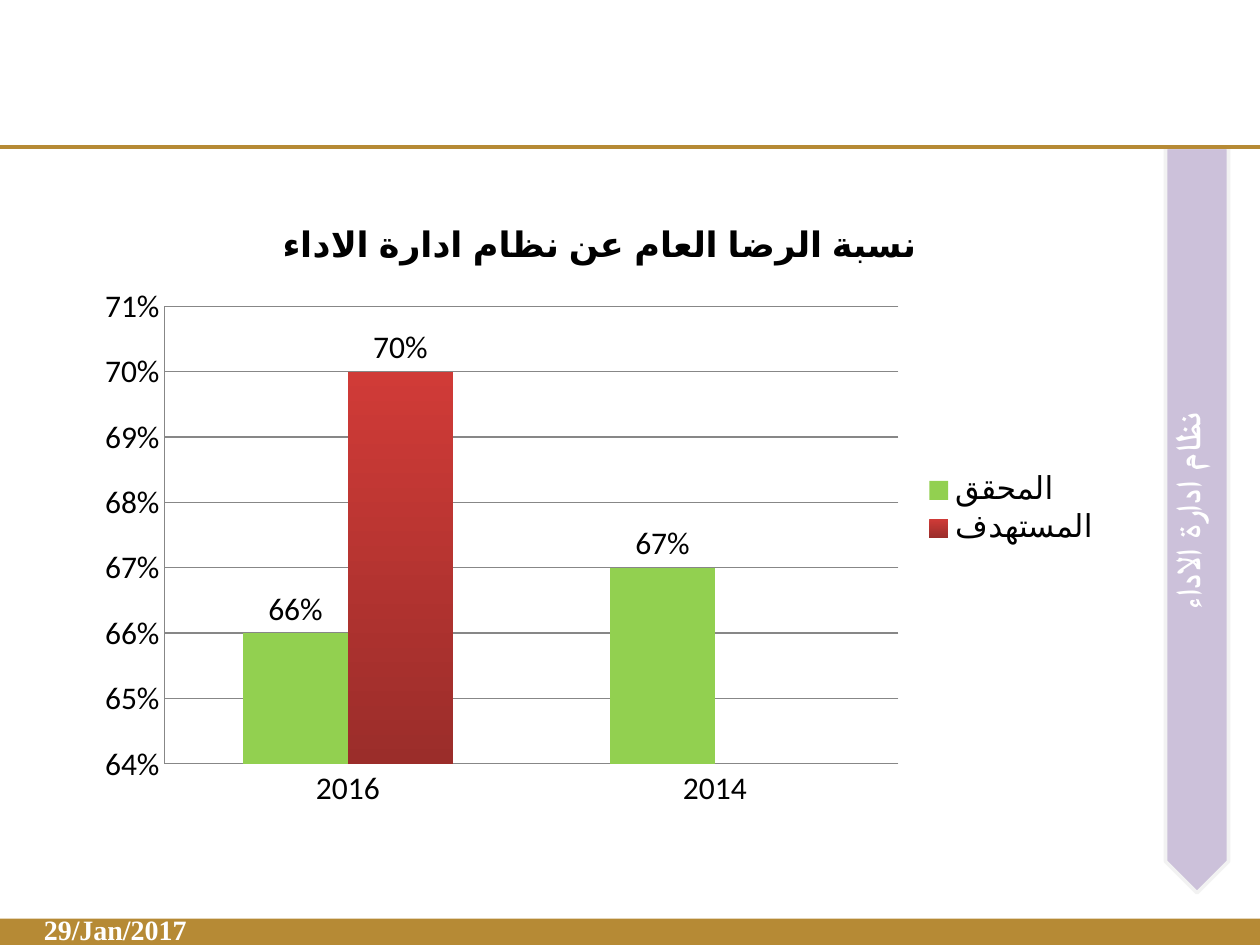
import dataclasses

import lxml.etree
import pptx
import pptx.chart.data
import pptx.dml.color
import pptx.enum.chart
import pptx.enum.shapes
import pptx.enum.text
import pptx.oxml.ns
import pptx.util

WIDE, HIGH = pptx.util.Inches(10), pptx.util.Inches(7.5)


@dataclasses.dataclass(frozen=True)
class Theme:
    """Colours, fonts and type sizes of the slide."""
    gold: str = "B68A35"
    lilac: str = "CCC1DA"
    pale: str = "F2F2F2"
    white: str = "FFFFFF"
    black: str = "000000"
    grey: str = "878787"
    green: str = "92D050"
    reds: tuple = ("D03B37", "9B2D2A")
    sans: str = "Calibri"
    serif: str = "Times New Roman"
    small: int = 16
    body: int = 18
    head: int = 20


THEME = Theme()


def tint(code):
    """Turn a hex code into a colour."""
    return pptx.dml.color.RGBColor.from_string(code)


def place(left, top, width, height):
    """Turn shares of the slide into a box of lengths."""
    return (round(left * WIDE), round(top * HIGH),
            round(width * WIDE), round(height * HIGH))


def style(font, size, color, name=THEME.sans, bold=False):
    """Set the face, size, weight and colour of a font."""
    font.name, font.size, font.bold = name, pptx.util.Pt(size), bold
    font.color.rgb = tint(color)


def block(slide, kind, box, fill):
    """Add a flat filled shape without a line."""
    shape = slide.shapes.add_shape(kind, *box)
    shape.shadow.inherit = False
    shape.fill.solid()
    shape.fill.fore_color.rgb = tint(fill)
    shape.line.fill.background()
    return shape


def label(slide, box, text, size, name):
    """Add a bold white text box and return its frame."""
    frame = slide.shapes.add_textbox(*box).text_frame
    frame.word_wrap = True
    line = frame.paragraphs[0]
    line.text = text
    style(line.font, size, THEME.white, name, True)
    return frame


def footer(slide, box):
    """Draw the gold foot band with the date."""
    left, top, width, height = box
    block(slide, pptx.enum.shapes.MSO_SHAPE.RECTANGLE, box, THEME.gold)
    area = (left + round(width * .025), top - round(height * .48),
            round(width * .233), round(height * 1.76))
    label(slide, area, "29/Jan/2017", THEME.small, THEME.serif)


def ribbon(slide, box):
    """Draw the downward side arrow with its upright caption."""
    left, top, width, height = box
    turned = (left + (width - height) // 2, top + (height - width) // 2,
              height, width)
    arrow = block(slide, pptx.enum.shapes.MSO_SHAPE.PENTAGON, turned, THEME.lilac)
    arrow.rotation = 90
    arrow.line.color.rgb = tint(THEME.pale)
    arrow.line.width = pptx.util.Pt(2)
    area = (left - round(width * .1), top + round(height * .03),
            round(width * 1.08), round(height * .915))
    frame = label(slide, area, "نظام ادارة الاداء", THEME.head, THEME.sans)
    frame.paragraphs[0].alignment = pptx.enum.text.PP_ALIGN.CENTER
    frame._txBody.bodyPr.set("vert", "vert270")


def rule(slide, box):
    """Draw the gold line across the top."""
    left, top, width, height = box
    line = slide.shapes.add_connector(
        pptx.enum.shapes.MSO_CONNECTOR.STRAIGHT, left, top, left + width, top + height)
    line.line.color.rgb = tint(THEME.gold)
    line.line.width = pptx.util.Pt(2.25)
    lxml.etree.SubElement(line._element.spPr, pptx.oxml.ns.qn("a:effectLst"))


def graph(slide, box):
    """Draw the column chart of satisfaction against target."""
    kinds = pptx.enum.chart
    data = pptx.chart.data.CategoryChartData(number_format="0%")
    data.categories = ["2016", "2014"]
    data.add_series("المحقق", [.66, .67])
    data.add_series("المستهدف", [.7, None])
    chart = slide.shapes.add_chart(
        kinds.XL_CHART_TYPE.COLUMN_CLUSTERED, *box, data).chart
    style(chart.font, THEME.body, THEME.black)
    chart.has_title = True
    title = chart.chart_title.text_frame.paragraphs[0]
    title.text = "نسبة الرضا العام عن نظام ادارة الاداء"
    style(title.font, THEME.head, THEME.black, bold=True)
    chart.chart_title.include_in_layout = False
    chart.has_legend = True
    chart.legend.position = kinds.XL_LEGEND_POSITION.RIGHT
    chart.legend.include_in_layout = False

    scale = chart.value_axis
    scale.minimum_scale, scale.maximum_scale, scale.major_unit = .64, .71, .01
    scale.tick_labels.number_format = "0%"
    scale.tick_labels.number_format_is_linked = False
    for axis in (scale, chart.category_axis):
        axis.major_tick_mark = kinds.XL_TICK_MARK.NONE
        axis.format.line.color.rgb = tint(THEME.grey)
    scale.major_gridlines.format.line.color.rgb = tint(THEME.grey)

    plot = chart.plots[0]
    plot.gap_width, plot.overlap, plot.vary_by_categories = 150, 0, False
    plot.has_data_labels = True
    marks = plot.data_labels
    marks.show_value = True
    marks.position = kinds.XL_LABEL_POSITION.OUTSIDE_END
    style(marks.font, THEME.body, THEME.black)
    actual, target = plot.series
    actual.format.fill.solid()
    actual.format.fill.fore_color.rgb = tint(THEME.green)
    fill = target.format.fill
    fill.gradient()
    fill.gradient_angle = 270
    for stop, code in zip(fill.gradient_stops, THEME.reds):
        stop.color.rgb = tint(code)
    for series in plot.series:
        series.invert_if_negative = False


def main():
    """Build and save the slide."""
    deck = pptx.Presentation()
    deck.slide_width, deck.slide_height = WIDE, HIGH
    slide = deck.slides.add_slide(deck.slide_layouts[6])
    footer(slide, place(0, .972, 1, .028))
    ribbon(slide, place(.925, .156, .05, .789))
    rule(slide, place(0, .156, 1, 0))
    graph(slide, place(.067, .211, .817, .656))
    deck.save("out.pptx")


if __name__ == "__main__":
    main()
